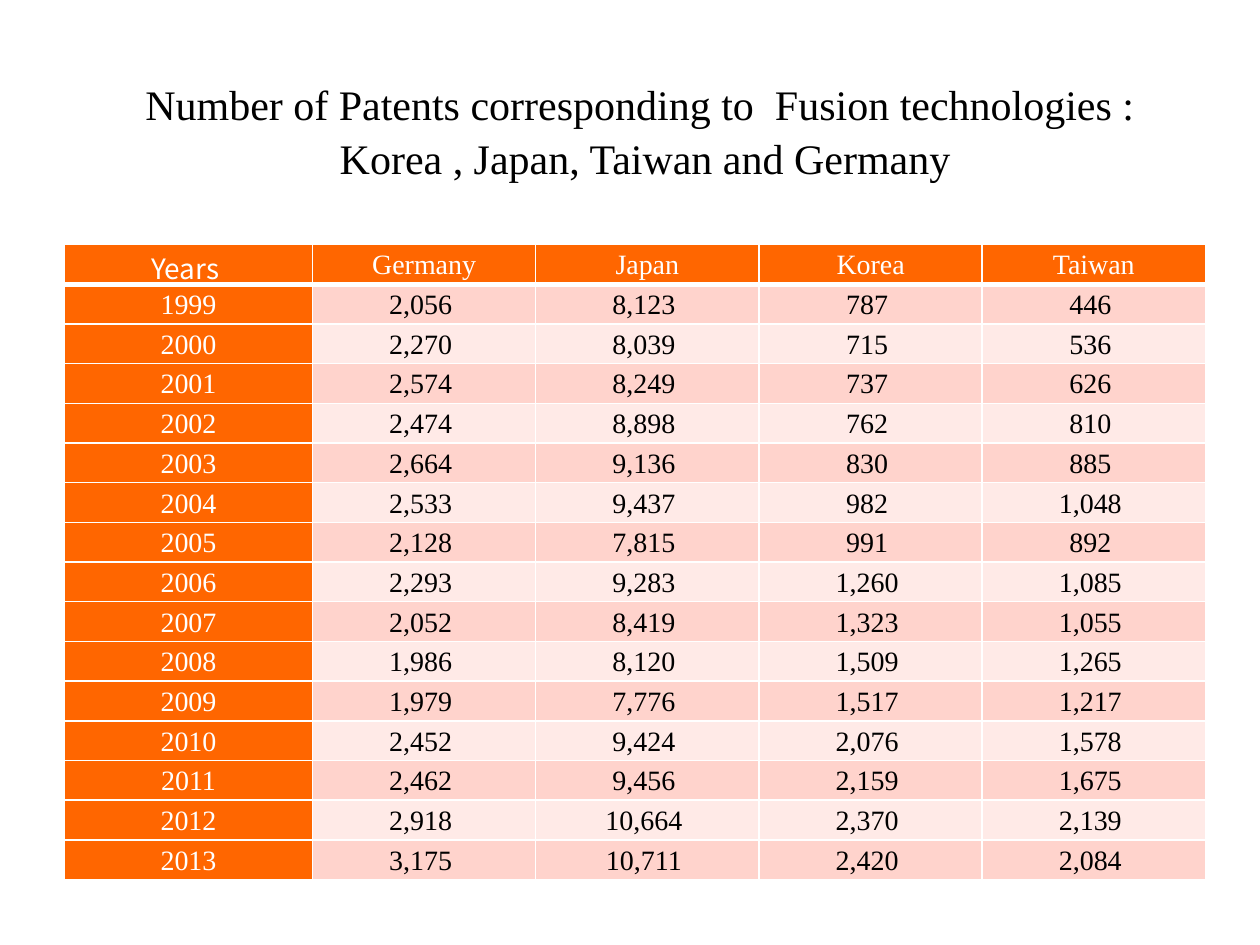
from dataclasses import dataclass

from lxml.etree import SubElement
from pptx import Presentation
from pptx.dml.color import RGBColor
from pptx.enum.text import MSO_ANCHOR as Anchor, MSO_AUTO_SIZE as AutoSize, PP_ALIGN as Align
from pptx.oxml.ns import qn
from pptx.util import Cm, Pt

SERIF = "Times New Roman"
SANS = "Noto Sans CJK KR"
ORANGE, WHITE, BLACK = "FF6600", "FFFFFF", "000000"
BANDS = ("FFD3CC", "FFEAE7")
TITLE = ("Number of Patents corresponding to  Fusion technologies :",
         " Korea , Japan, Taiwan and Germany")
COUNTRIES = ("Germany", "Japan", "Korea", "Taiwan")


@dataclass
class PatentYear:
    year: int
    counts: tuple[int, int, int, int]


PATENTS = [
    PatentYear(1999, (2056, 8123, 787, 446)),
    PatentYear(2000, (2270, 8039, 715, 536)),
    PatentYear(2001, (2574, 8249, 737, 626)),
    PatentYear(2002, (2474, 8898, 762, 810)),
    PatentYear(2003, (2664, 9136, 830, 885)),
    PatentYear(2004, (2533, 9437, 982, 1048)),
    PatentYear(2005, (2128, 7815, 991, 892)),
    PatentYear(2006, (2293, 9283, 1260, 1085)),
    PatentYear(2007, (2052, 8419, 1323, 1055)),
    PatentYear(2008, (1986, 8120, 1509, 1265)),
    PatentYear(2009, (1979, 7776, 1517, 1217)),
    PatentYear(2010, (2452, 9424, 2076, 1578)),
    PatentYear(2011, (2462, 9456, 2159, 1675)),
    PatentYear(2012, (2918, 10664, 2370, 2139)),
    PatentYear(2013, (3175, 10711, 2420, 2084)),
]


@dataclass
class CellStyle:
    fill: str
    color: str = WHITE
    font: str = SERIF
    bottom: int = 1


def rgb(value: str) -> RGBColor:
    return RGBColor.from_string(value)


def set_attrs(obj, values: dict) -> None:
    for name, value in values.items():
        setattr(obj, name, value)


def write(p, text: str, size: int, color: str, font: str, spacing: float) -> None:
    set_attrs(p, {"alignment": Align.CENTER, "line_spacing": spacing})
    r = p.add_run()
    r.text = text
    set_attrs(r.font, {"name": font, "size": Pt(size), "bold": False})
    r.font.color.rgb = rgb(color)


def set_borders(cell, bottom: int) -> None:
    tc_pr = cell._tc.get_or_add_tcPr()
    widths = {"a:lnL": 1, "a:lnR": 1, "a:lnT": 1, "a:lnB": bottom}
    for i, (tag, width) in enumerate(widths.items()):
        ln = SubElement(tc_pr, qn(tag), w=str(Pt(width)))
        fill = SubElement(ln, qn("a:solidFill"))
        SubElement(fill, qn("a:srgbClr"), val=WHITE)
        tc_pr.insert(i, ln)


def fill_cell(cell, text: str, style: CellStyle) -> None:
    set_attrs(cell, {"margin_left": 0, "margin_right": 0, "margin_top": 0,
                     "margin_bottom": 0, "vertical_anchor": Anchor.MIDDLE})
    cell.fill.solid()
    cell.fill.fore_color.rgb = rgb(style.fill)
    set_borders(cell, style.bottom)
    write(cell.text_frame.paragraphs[0], text, 16, style.color, style.font, 1.07)


def add_title(slide) -> None:
    sp = slide.shapes.title
    set_attrs(sp, {"left": Cm(2.1), "top": Cm(1.4), "width": Cm(21.6), "height": Cm(2.3)})
    tf = sp.text_frame
    set_attrs(tf, {"word_wrap": True, "vertical_anchor": Anchor.TOP,
                   "auto_size": AutoSize.SHAPE_TO_FIT_TEXT})
    for i, line in enumerate(TITLE):
        p = tf.add_paragraph() if i else tf.paragraphs[0]
        write(p, line, 24, BLACK, SERIF, 1.06)


def add_patent_table(slide) -> None:
    rows, cols = len(PATENTS) + 1, len(COUNTRIES) + 1
    table = slide.shapes.add_table(rows, cols, Cm(1.3), Cm(4.93), Cm(23), Cm(0.8 * rows)).table
    for i, col in enumerate(table.columns):
        col.width = Cm(4.5 if i else 5)
    for row in table.rows:
        row.height = Cm(0.8)

    # Header row
    fill_cell(table.cell(0, 0), "Years ", CellStyle(ORANGE, font=SANS, bottom=3))
    for c, country in enumerate(COUNTRIES, 1):
        fill_cell(table.cell(0, c), country, CellStyle(ORANGE, bottom=3))

    # One banded row per year
    for r, entry in enumerate(PATENTS, 1):
        fill_cell(table.cell(r, 0), str(entry.year), CellStyle(ORANGE))
        band = CellStyle(BANDS[(r - 1) % 2], BLACK)
        for c, count in enumerate(entry.counts, 1):
            fill_cell(table.cell(r, c), f"{count:,} ", band)


def main() -> None:
    prs = Presentation()
    set_attrs(prs, {"slide_width": Cm(25.4), "slide_height": Cm(19.05)})
    slide = prs.slides.add_slide(prs.slide_layouts[5])
    add_title(slide)
    add_patent_table(slide)
    prs.save("out.pptx")


if __name__ == "__main__":
    main()
